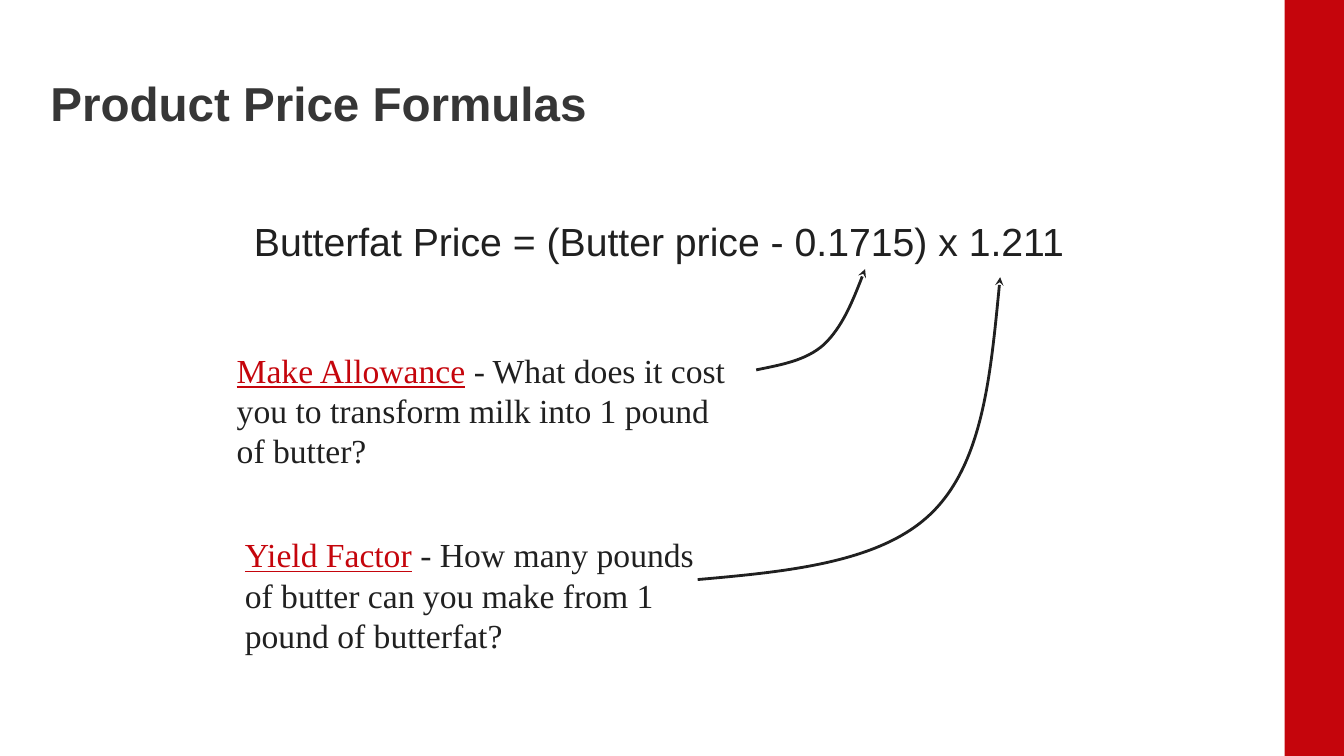
from lxml import etree
from pptx import Presentation
from pptx.dml.color import RGBColor
from pptx.enum.shapes import MSO_SHAPE
from pptx.enum.text import MSO_ANCHOR, MSO_AUTO_SIZE
from pptx.oxml.ns import qn
from pptx.util import Inches, Pt

RECTANGLE = MSO_SHAPE.RECTANGLE
TOP, BOTTOM = MSO_ANCHOR.TOP, MSO_ANCHOR.BOTTOM
GROW = MSO_AUTO_SIZE.SHAPE_TO_FIT_TEXT
COLORS = {"red": "C5050C", "title": "363636", "ink": "202020"}


def color(name):
    """Return the named palette colour."""
    return RGBColor.from_string(COLORS[name])


def add_side_band(slide):
    """Draw the red band along the right edge."""
    band = slide.shapes.add_shape(
        RECTANGLE, Inches(12.74), Inches(0), Inches(0.59), Inches(7.5))
    band.shadow.inherit = False
    band.fill.solid()
    band.fill.fore_color.rgb = color("red")
    band.line.fill.background()


def add_text(slide, box, anchor=TOP, wrap=True):
    """Add an empty text box and return its text frame."""
    frame = slide.shapes.add_textbox(*map(Inches, box)).text_frame
    frame.word_wrap = wrap
    frame.auto_size = GROW
    frame.vertical_anchor = anchor
    return frame


def add_run(paragraph, text, font_name, size, color_name, bold=False, underline=False):
    """Append one formatted run to a paragraph."""
    run = paragraph.add_run()
    run.text = text
    run.font.name = font_name
    run.font.size = Pt(size)
    run.font.bold = bold
    run.font.underline = underline
    run.font.color.rgb = color(color_name)


def add_title(slide, text):
    """Add the slide title."""
    frame = add_text(slide, (0.5, 0.74, 11.92, 0.57), BOTTOM)
    frame.margin_left = frame.margin_bottom = 0
    paragraph = frame.paragraphs[0]
    paragraph.line_spacing = 0.9
    add_run(paragraph, text, "Arial", 34, "title", bold=True)


def add_formula(slide, text):
    """Add the price formula on one line."""
    frame = add_text(slide, (2.42, 2.11, 8.32, 0.57), wrap=False)
    add_run(frame.paragraphs[0], text, "Arial", 28, "ink")


def add_definition(slide, box, term, meaning):
    """Add an underlined term followed by its meaning."""
    paragraph = add_text(slide, box).paragraphs[0]
    add_run(paragraph, term, "Times New Roman", 24, "red", underline=True)
    add_run(paragraph, f" - {meaning}", "Times New Roman", 24, "ink")


def add_curved_arrow(slide, points):
    """Draw a Bézier arrow from a start point and triples of curve points."""
    start, *rest = [(Inches(x), Inches(y)) for x, y in points]
    builder = slide.shapes.build_freeform(*start)
    builder.add_line_segments(rest, close=False)
    arrow = builder.convert_to_shape()
    arrow.shadow.inherit = False
    arrow.fill.background()
    arrow.line.color.rgb = color("ink")
    arrow.line.width = Pt(2)
    properties = arrow.element.spPr
    segments = list(properties.iter(qn("a:lnTo")))
    outline = segments[0].getparent()
    for first in range(0, len(segments), 3):
        curve = etree.SubElement(outline, qn("a:cubicBezTo"))
        for segment in segments[first:first + 3]:
            curve.append(segment[0])
            outline.remove(segment)
    etree.SubElement(properties.find(qn("a:ln")), qn("a:tailEnd"), type="stealth")


def main():
    """Build and save the slide."""
    presentation = Presentation()
    presentation.slide_width = Inches(13.33)
    presentation.slide_height = Inches(7.5)
    slide = presentation.slides.add_slide(presentation.slide_layouts[6])
    add_side_band(slide)
    add_title(slide, "Product Price Formulas")
    add_formula(slide, "Butterfat Price = (Butter price - 0.1715) x 1.211")
    add_definition(slide, (2.25, 3.42, 5.17, 1.31), "Make Allowance",
                   "What does it cost you to transform milk into 1 pound of butter?")
    add_definition(slide, (2.33, 5.25, 4.75, 1.31), "Yield Factor",
                   "How many pounds of butter can you make from 1 pound of butterfat?")
    add_curved_arrow(slide, [
        (7.5, 3.67), (7.74, 3.62), (7.99, 3.58), (8.17, 3.42),
        (8.35, 3.25), (8.47, 2.96), (8.58, 2.67)])
    add_curved_arrow(slide, [
        (6.92, 5.75), (7.83, 5.67), (8.75, 5.58), (9.25, 5.08),
        (9.75, 4.58), (9.83, 3.67), (9.92, 2.75)])
    presentation.save("out.pptx")


if __name__ == "__main__":
    main()
